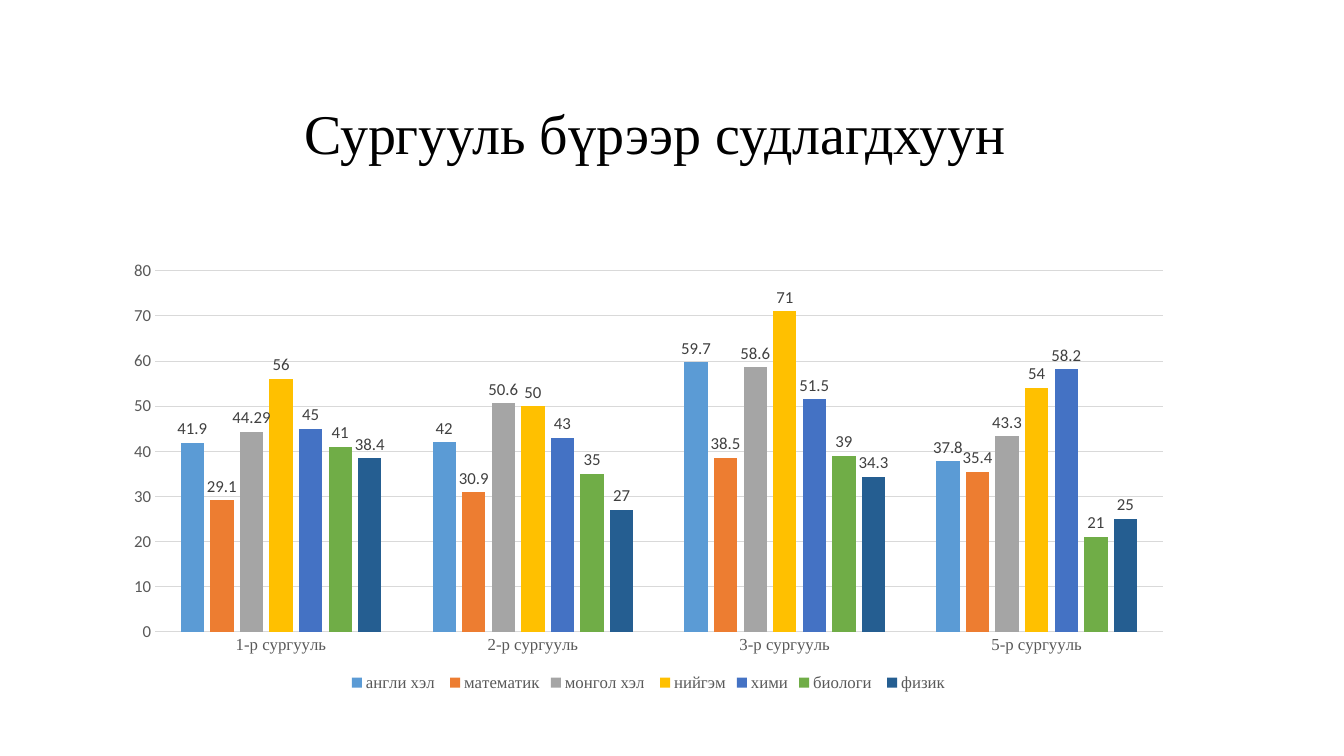
from dataclasses import dataclass

from pptx import Presentation
from pptx.chart.chart import Chart
from pptx.chart.data import CategoryChartData as ChartData
from pptx.dml.color import RGBColor
from pptx.enum.chart import XL_CHART_TYPE as Kind
from pptx.enum.chart import XL_LABEL_POSITION as Spot
from pptx.enum.chart import XL_LEGEND_POSITION as Side
from pptx.enum.chart import XL_TICK_MARK as Tick
from pptx.enum.text import MSO_ANCHOR as Anchor
from pptx.enum.text import PP_ALIGN as Align
from pptx.slide import Slide
from pptx.text.text import Font
from pptx.util import Cm, Pt

BLACK = RGBColor(0x00, 0x00, 0x00)
DARK = RGBColor(0x40, 0x40, 0x40)
GRAY = RGBColor(0x59, 0x59, 0x59)
PALE = RGBColor(0xD9, 0xD9, 0xD9)
SKY = RGBColor(0x5B, 0x9B, 0xD5)
ORANGE = RGBColor(0xED, 0x7D, 0x31)
SILVER = RGBColor(0xA5, 0xA5, 0xA5)
GOLD = RGBColor(0xFF, 0xC0, 0x00)
BLUE = RGBColor(0x44, 0x72, 0xC4)
GREEN = RGBColor(0x70, 0xAD, 0x47)
NAVY = RGBColor(0x25, 0x5E, 0x91)

SERIF = "Times New Roman"
SANS = "Calibri"


@dataclass(frozen=True)
class Subject:
    name: str
    marks: tuple[float, ...]
    color: RGBColor


SCHOOLS = [f"{num}-р сургууль" for num in (1, 2, 3, 5)]
SUBJECTS = [
    Subject("англи хэл ", (41.9, 42, 59.7, 37.8), SKY),
    Subject("математик", (29.1, 30.9, 38.5, 35.4), ORANGE),
    Subject("монгол хэл ", (44.29, 50.6, 58.6, 43.3), SILVER),
    Subject("нийгэм", (56, 50, 71, 54), GOLD),
    Subject("хими", (45, 43, 51.5, 58.2), BLUE),
    Subject("биологи ", (41, 35, 39, 21), GREEN),
    Subject("физик", (38.4, 27, 34.3, 25), NAVY),
]


def apply(item: object, **values: object) -> None:
    for key, value in values.items():
        setattr(item, key, value)


def style(font: Font, size: float, name: str, color: RGBColor) -> None:
    apply(font, size=Pt(size), name=name, bold=False)
    font.color.rgb = color


def add_title(slide: Slide) -> None:
    title = slide.shapes.title
    apply(title, left=Cm(3.18), top=Cm(1.35), width=Cm(27), height=Cm(4.17))
    frame = title.text_frame
    apply(frame, text="Сургууль бүрээр судлагдхуун ", word_wrap=True,
          vertical_anchor=Anchor.MIDDLE)
    line = frame.paragraphs[0]
    apply(line, alignment=Align.CENTER, line_spacing=0.9)
    style(line.runs[0].font, 40, SERIF, BLACK)


def add_chart(slide: Slide) -> Chart:
    data = ChartData()
    data.categories = SCHOOLS
    for topic in SUBJECTS:
        data.add_series(topic.name, topic.marks)
    frame = slide.shapes.add_chart(
        Kind.COLUMN_CLUSTERED, Cm(2.84), Cm(6.35), Cm(27), Cm(11.18), data)
    chart = frame.chart
    apply(chart, has_title=False, has_legend=True)
    style(chart.font, 10, SANS, BLACK)
    apply(chart.legend, position=Side.BOTTOM, include_in_layout=False)
    style(chart.legend.font, 12, SERIF, GRAY)
    return chart


def format_axes(chart: Chart) -> None:
    base, scale = chart.category_axis, chart.value_axis
    for axis, name in ((base, SERIF), (scale, SANS)):
        apply(axis, major_tick_mark=Tick.NONE, minor_tick_mark=Tick.NONE)
        style(axis.tick_labels.font, 12, name, GRAY)
    apply(scale, minimum_scale=0, maximum_scale=80, major_unit=10,
          has_major_gridlines=True)
    scale.format.line.fill.background()
    for rule in (base.format.line, scale.major_gridlines.format.line):
        rule.width = Pt(0.75)
        rule.color.rgb = PALE


def format_bars(chart: Chart) -> None:
    plot = chart.plots[0]
    apply(plot, gap_width=219, overlap=-27, vary_by_categories=False)
    for bars, topic in zip(plot.series, SUBJECTS):
        bars.invert_if_negative = False
        bars.format.fill.solid()
        bars.format.fill.fore_color.rgb = topic.color
        labels = bars.data_labels
        apply(labels, show_value=True, position=Spot.OUTSIDE_END)
        style(labels.font, 12, SANS, DARK)


def main() -> None:
    deck = Presentation()
    apply(deck, slide_width=Cm(33.87), slide_height=Cm(19.05))
    slide = deck.slides.add_slide(deck.slide_layouts.get_by_name("Title Only"))

    # Heading
    add_title(slide)

    # Marks by school and subject
    chart = add_chart(slide)
    format_axes(chart)
    format_bars(chart)

    deck.save("out.pptx")


if __name__ == "__main__":
    main()
